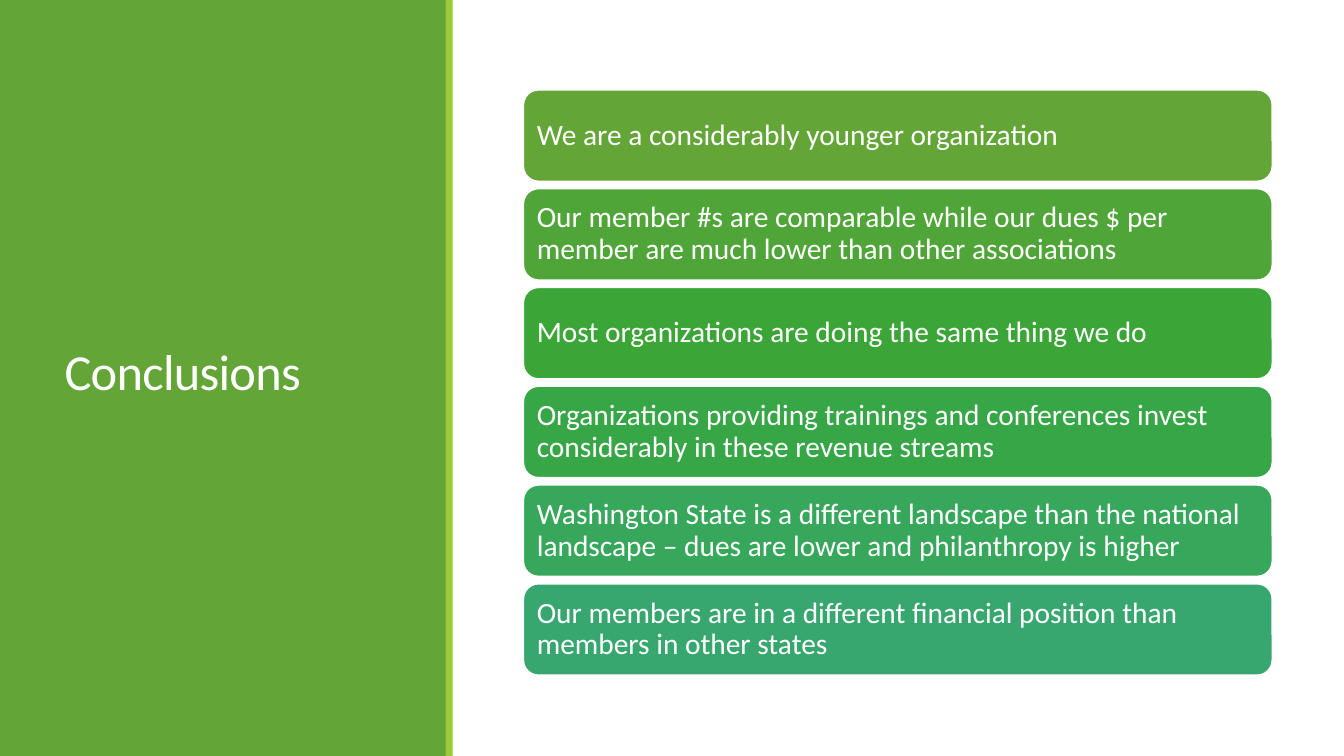
from pptx import Presentation
from pptx.dml.color import RGBColor
from pptx.enum.shapes import MSO_SHAPE
from pptx.enum.text import MSO_ANCHOR, PP_ALIGN
from pptx.util import Inches, Pt

COLORS = {"panel": "63A537", "accent": "99CB38", "white": "FFFFFF"}

CONCLUSIONS = [
    ("We are a considerably younger organization", "63A537"),
    ("Our member #s are comparable while our dues $ per member are much lower "
     "than other associations", "4FA537"),
    ("Most organizations are doing the same thing we do", "3BA637"),
    ("Organizations providing trainings and conferences invest considerably "
     "in these revenue streams", "37A647"),
    ("Washington State is a different landscape than the national landscape – "
     "dues are lower and philanthropy is higher", "37A75B"),
    ("Our members are in a different financial position than members in other "
     "states", "37A76F"),
]
CARD_TOP, CARD_PITCH = 0.89, 0.98


def add_filled_shape(kind, left, top, width, height, color):
    shape = slide.shapes.add_shape(
        kind, Inches(left), Inches(top), Inches(width), Inches(height))
    shape.shadow.inherit = False
    shape.fill.solid()
    shape.fill.fore_color.rgb = RGBColor.from_string(color)
    shape.line.fill.background()
    return shape


def write_text(shape, text, size, line_spacing):
    """Fill the shape with one left-aligned, vertically centred white paragraph."""
    frame = shape.text_frame
    frame.text = text
    frame.word_wrap = True
    frame.vertical_anchor = MSO_ANCHOR.MIDDLE
    paragraph = frame.paragraphs[0]
    paragraph.alignment = PP_ALIGN.LEFT
    paragraph.line_spacing = line_spacing
    paragraph.font.name = "Calibri"
    paragraph.font.size = Pt(size)
    paragraph.font.color.rgb = RGBColor.from_string(COLORS["white"])


presentation = Presentation()
presentation.slide_width = Inches(13.33)
presentation.slide_height = Inches(7.5)
slide = presentation.slides.add_slide(presentation.slide_layouts[5])

# Side panel with its accent stripe
panel = add_filled_shape(MSO_SHAPE.RECTANGLE, 0, 0, 4.43, 7.5, COLORS["panel"])
add_filled_shape(MSO_SHAPE.RECTANGLE, 4.42, 0, 0.07, 7.5, COLORS["accent"])

# Title, placed in front of the panel
title = slide.shapes.title
title.left, title.top = Inches(0.54), Inches(0.57)
title.width, title.height = Inches(3.37), Inches(6.31)
write_text(title, "Conclusions", 36, 0.85)
title.text_frame.paragraphs[0].runs[0].font._element.set("spc", "-50")
panel._element.addnext(title._element)

# Conclusion cards
for index, (text, color) in enumerate(CONCLUSIONS):
    card = add_filled_shape(MSO_SHAPE.ROUNDED_RECTANGLE, 5.19,
                            CARD_TOP + index * CARD_PITCH, 7.43, 0.91, color)
    card.line.color.rgb = RGBColor.from_string(COLORS["white"])
    card.line.width = Pt(1.25)
    write_text(card, text, 21, 0.9)
    card.text_frame.margin_left = card.text_frame.margin_right = Inches(0.09)

presentation.save("out.pptx")
